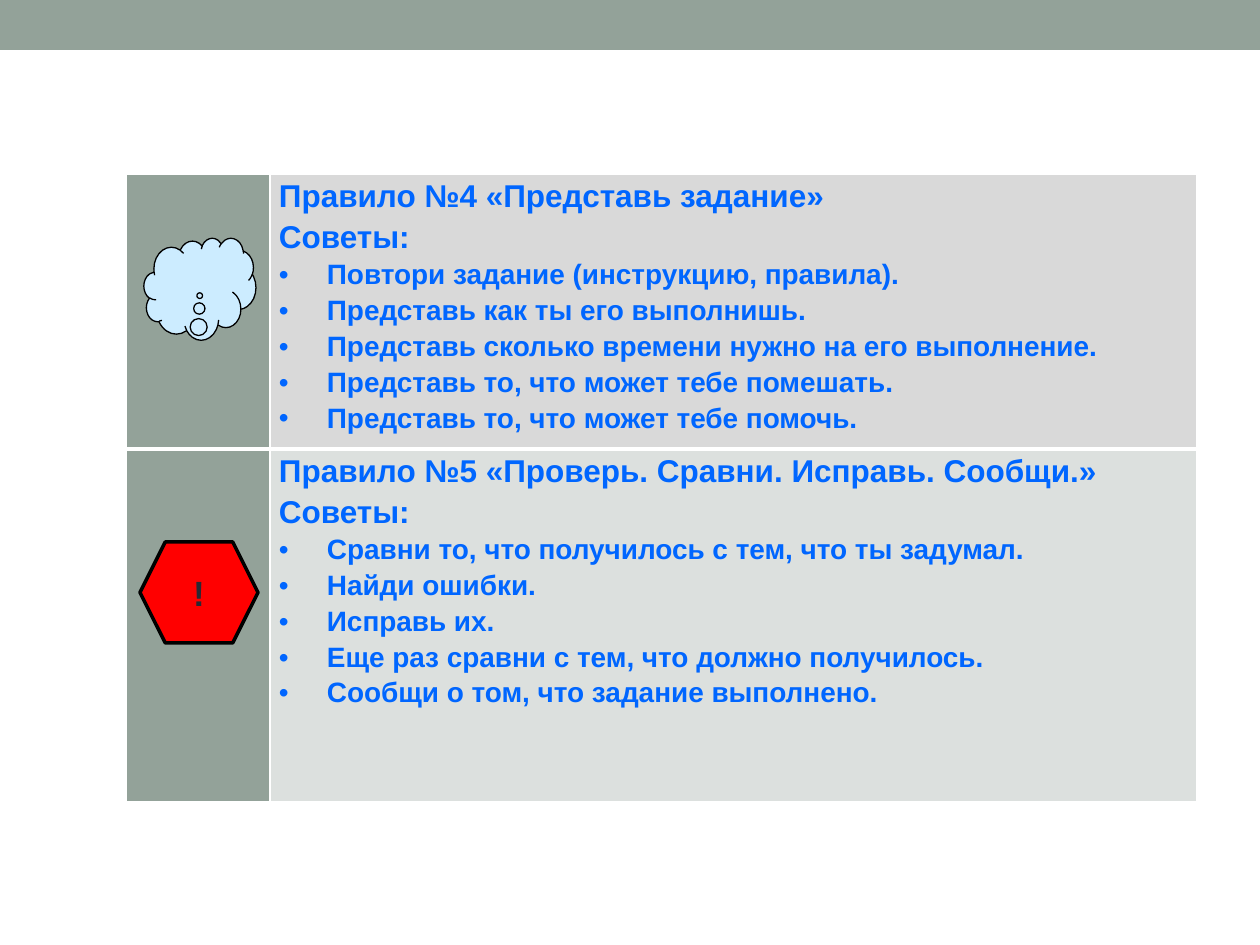
"""Build a slide with rules 4 and 5 for doing a task, each with its advice and symbol."""
from lxml import etree
from pptx import Presentation
from pptx.dml.color import RGBColor as RGB
from pptx.enum.shapes import MSO_SHAPE as SHAPE
from pptx.enum.text import MSO_ANCHOR as ANCHOR, PP_ALIGN as ALIGN
from pptx.oxml.ns import qn
from pptx.util import Emu, Pt

COLORS = {
    "sage": "93A299", "gray": "D9D9D9", "mist": "DCE0DE", "white": "FFFFFF",
    "blue": "0066FF", "sky": "CCECFF", "red": "FF0000", "black": "000000", "dark": "292934",
}
RULES = [
    ("gray", ["Правило №4 «Представь задание»", "Советы:"],
     ["Повтори задание (инструкцию, правила).",
      "Представь как ты его выполнишь.",
      "Представь сколько времени нужно на его выполнение.",
      "Представь то, что может тебе помешать.",
      "Представь то, что может тебе помочь."]),
    ("mist", ["Правило №5 «Проверь. Сравни. Исправь. Сообщи.»", "Советы:"],
     ["Сравни то, что получилось с тем, что ты задумал.",
      "Найди ошибки.",
      "Исправь их.",
      "Еще раз сравни с тем, что должно получилось.",
      "Сообщи о том, что задание выполнено."]),
]


def px(n):
    return Emu(round(n * 914400 / 126))


def add_run(p, text, size, color):
    r = p.add_run()
    r.text = text
    r.font.name, r.font.size, r.font.bold = "Arial", Pt(size), True
    r.font.color.rgb = RGB.from_string(COLORS[color])


prs = Presentation()
prs.slide_width, prs.slide_height = px(1260), px(945)
s = prs.slides.add_slide(prs.slide_layouts[6])

band = s.shapes.add_shape(SHAPE.RECTANGLE, 0, 0, px(1260), px(50))
band.shadow.inherit = False
band.fill.solid()
band.fill.fore_color.rgb = RGB.from_string(COLORS["sage"])
band.line.fill.background()

table = s.shapes.add_table(2, 2, px(126), px(174), px(1071), px(628)).table
for col, width in zip(table.columns, (144, 927)):
    col.width = px(width)
for row, height in zip(table.rows, (275, 353)):
    row.height = px(height)

for i, (color, headings, tips) in enumerate(RULES):
    for j, fill in enumerate(("sage", color)):
        cell = table.cell(i, j)
        cell.fill.solid()
        cell.fill.fore_color.rgb = RGB.from_string(COLORS[fill])
        cell.margin_left = cell.margin_right = px(9)
        cell.margin_top = cell.margin_bottom = 0
        tcPr = cell._tc.get_or_add_tcPr()
        widths = {"L": 1, "R": 1, "T": 3 if i == 1 else 1, "B": 3 if i == 0 else 1}
        for k, (side, width) in enumerate(widths.items()):
            ln = etree.Element(qn(f"a:ln{side}"), w=str(Pt(width)))
            solid = etree.SubElement(ln, qn("a:solidFill"))
            etree.SubElement(solid, qn("a:srgbClr"), val=COLORS["white"])
            tcPr.insert(k, ln)

    tf = table.cell(i, 1).text_frame
    for n, text in enumerate(headings + tips):
        p = tf.add_paragraph() if n else tf.paragraphs[0]
        p.line_spacing = 1.15
        is_tip = n >= len(headings)
        if is_tip:
            pPr = p._p.get_or_add_pPr()
            pPr.set("marL", str(px(48)))
            pPr.set("indent", str(-px(48)))
            etree.SubElement(pPr, qn("a:buFont"), typeface="Arial")
            etree.SubElement(pPr, qn("a:buChar"), char="•")
        add_run(p, text, 16 if is_tip else 18, "blue")

SYMBOLS = [
    (SHAPE.CLOUD_CALLOUT, (144, 238, 112, 102), (-0.002, 0.066), "sky", 0.75, ""),
    (SHAPE.HEXAGON, (140, 542, 118, 101), (0.25, 1.1547), "red", 2, "!"),
]
for kind, box, adjustments, fill, line, text in SYMBOLS:
    sp = s.shapes.add_shape(kind, *map(px, box))
    sp.shadow.inherit = False
    for k, value in enumerate(adjustments):
        sp.adjustments[k] = value
    sp.fill.solid()
    sp.fill.fore_color.rgb = RGB.from_string(COLORS[fill])
    sp.line.color.rgb = RGB.from_string(COLORS["black"])
    sp.line.width = Pt(line)
    if text:
        tf = sp.text_frame
        tf.vertical_anchor = ANCHOR.MIDDLE
        tf.paragraphs[0].alignment = ALIGN.CENTER
        add_run(tf.paragraphs[0], text, 20, "dark")

prs.save("out.pptx")
